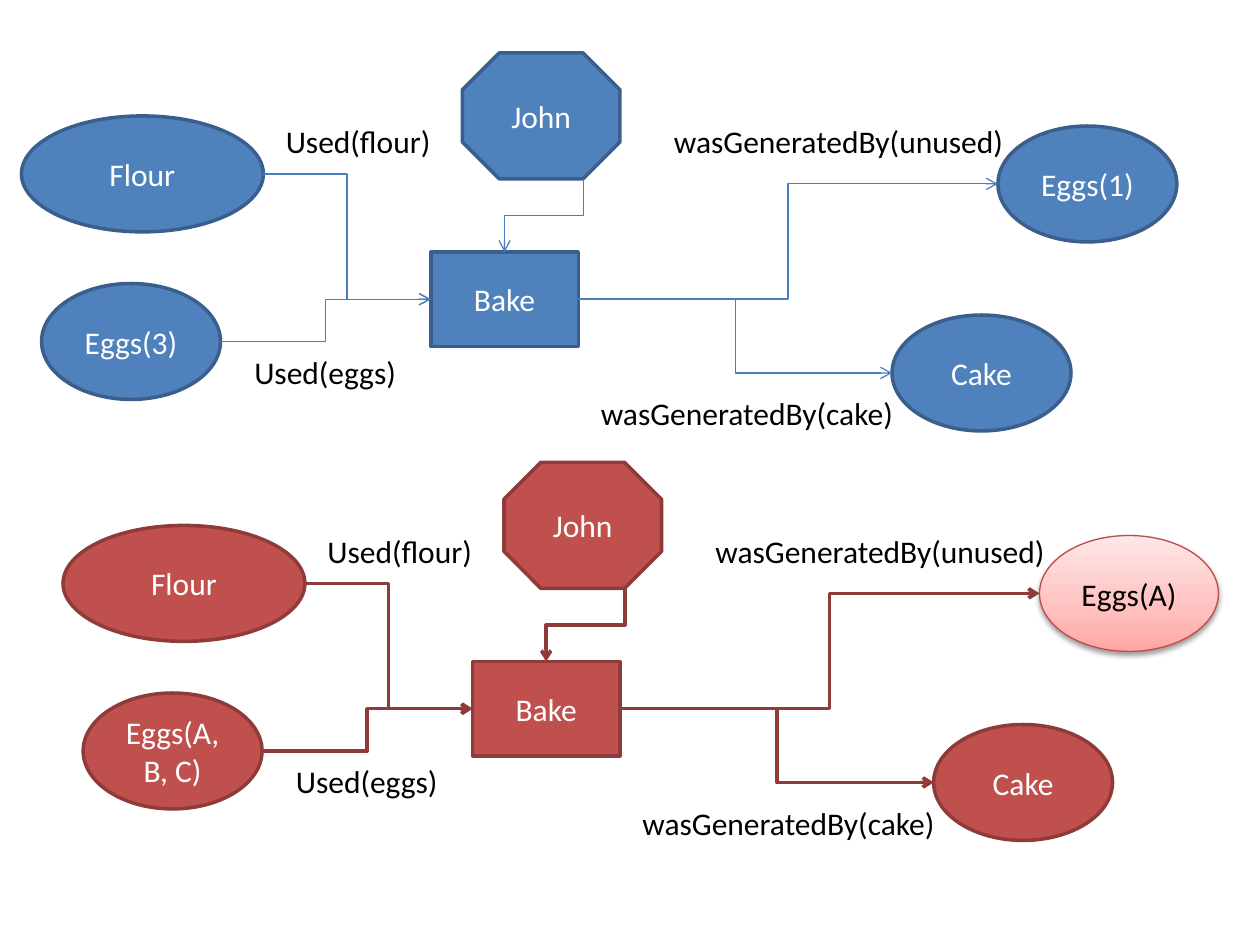
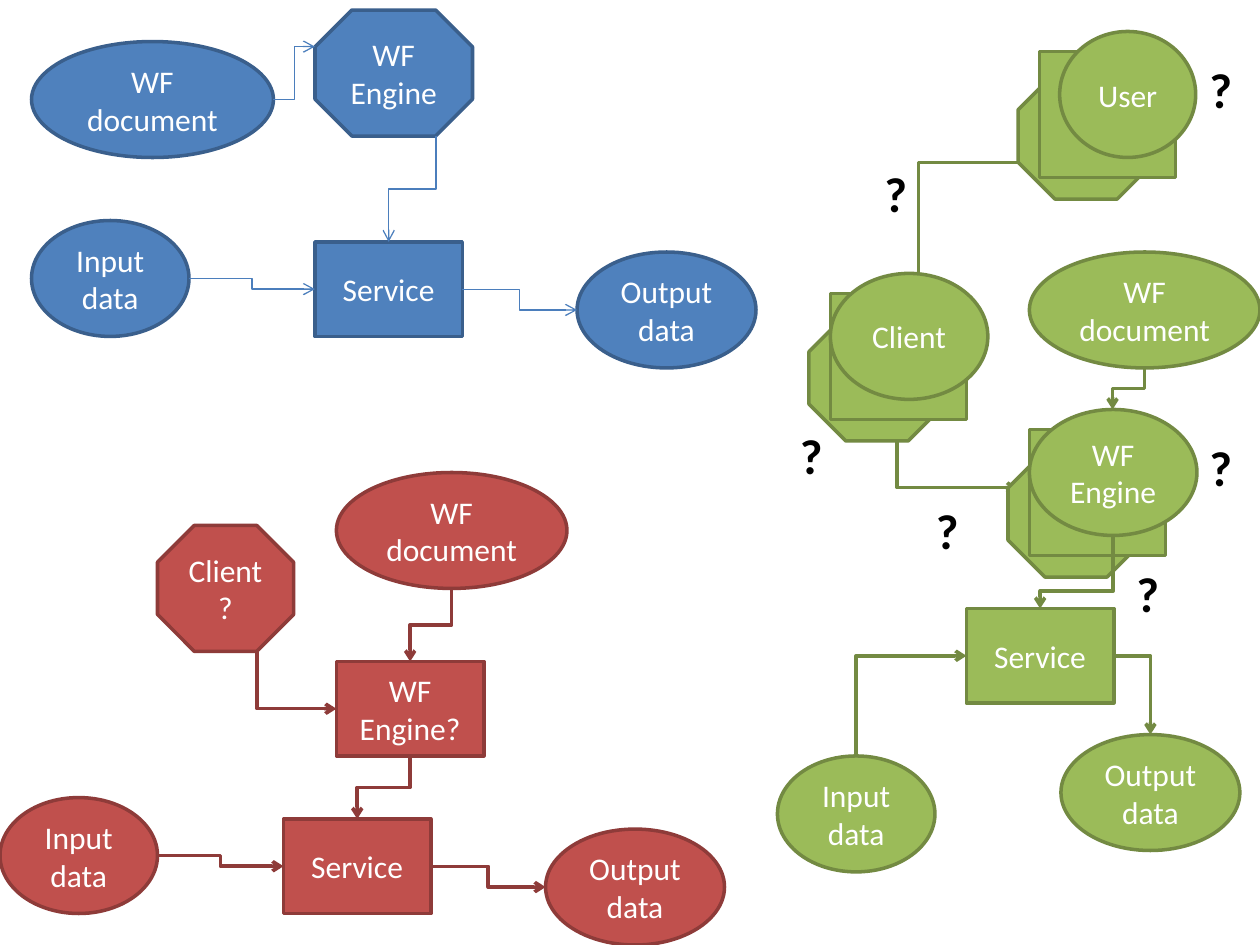
from collections import namedtuple
from lxml.etree import SubElement
from pptx import Presentation
from pptx.dml.color import RGBColor
from pptx.enum.shapes import MSO_CONNECTOR, MSO_SHAPE
from pptx.enum.text import MSO_ANCHOR, MSO_AUTO_SIZE, PP_ALIGN
from pptx.oxml.ns import qn
from pptx.util import Inches, Pt

WHITE = RGBColor(0xFF, 0xFF, 0xFF)
BLACK = RGBColor(0x00, 0x00, 0x00)
PINK_EDGE = RGBColor(0xBF, 0x4C, 0x48)
PINK_STOPS = ((0, RGBColor(0xFF, 0xA6, 0xA5)),
              (35, RGBColor(0xFF, 0xC0, 0xBF)),
              (100, RGBColor(0xFF, 0xE7, 0xE7)))

Look = namedtuple("Look", "fill edge flow flow_width")
BLUE = Look(RGBColor(0x4F, 0x81, 0xBD), RGBColor(0x3A, 0x5F, 0x8C),
            RGBColor(0x4B, 0x7E, 0xBC), 0.75)
RED = Look(RGBColor(0xC0, 0x50, 0x4D), RGBColor(0x8E, 0x3B, 0x39),
           RGBColor(0x8E, 0x3B, 0x39), 2)
GREEN = Look(RGBColor(0x9B, 0xBB, 0x59), RGBColor(0x73, 0x8A, 0x42),
             RGBColor(0x73, 0x8A, 0x42), 2)

RECT, OVAL, OCTAGON = MSO_SHAPE.RECTANGLE, MSO_SHAPE.OVAL, MSO_SHAPE.OCTAGON
BODY = {"name": "Calibri", "size": Pt(18)}
MARK = {"name": "Calibri", "size": Pt(28), "bold": True}
STEP = (1.17, 0.75)
DATA = (1.42, 0.92)
INPUT = (1.25, 0.92)
AGENT = (1.25, 1)
STACKED = (1.08, 1)
OCTAGON_CUT = 0.29

LEFT, RIGHT, TOP, BOTTOM = (0, 0.5), (1, 0.5), (0.5, 0), (0.5, 1)


def write(tf, text, fmt, color, align):
    tf.text = text
    for p in tf.paragraphs:
        p.alignment = align
        for r in p.runs:
            for name, value in fmt.items():
                setattr(r.font, name, value)
            r.font.color.rgb = color


def node(s, kind, x, y, size, text, look):
    sp = s.shapes.add_shape(kind, Inches(x), Inches(y), *map(Inches, size))
    sp.shadow.inherit = False
    sp.fill.solid()
    sp.fill.fore_color.rgb = look.fill
    sp.line.color.rgb = look.edge
    sp.line.width = Pt(2)
    if text:
        tf = sp.text_frame
        tf.word_wrap = True
        tf.vertical_anchor = MSO_ANCHOR.MIDDLE
        write(tf, text, BODY, WHITE, PP_ALIGN.CENTER)
    return sp


def label(s, x, y, w, h, text, fmt=BODY):
    tf = s.shapes.add_textbox(*map(Inches, (x, y, w, h))).text_frame
    tf.word_wrap = False
    tf.auto_size = MSO_AUTO_SIZE.SHAPE_TO_FIT_TEXT
    write(tf, text, fmt, BLACK, PP_ALIGN.LEFT)


def add_color(parent, rgb):
    return SubElement(parent, qn("a:srgbClr"), val=str(rgb))


def make_pastel(sp):
    sp.fill.gradient()
    sp.fill.gradient_angle = 90
    sp.line.color.rgb = PINK_EDGE
    sp.line.width = Pt(0.75)
    sp.text_frame.paragraphs[0].runs[0].font.color.rgb = BLACK
    spPr = sp._element.spPr
    stops = spPr.find(".//" + qn("a:gsLst"))
    for stop in list(stops):
        stops.remove(stop)
    for pos, rgb in PINK_STOPS:
        add_color(SubElement(stops, qn("a:gs"), pos=str(pos * 1000)), rgb)
    shadow = SubElement(spPr.find(qn("a:effectLst")), qn("a:outerShdw"),
                        blurRad=str(Pt(3.1)), dist=str(Pt(1.6)),
                        dir="5400000", rotWithShape="0")
    SubElement(add_color(shadow, BLACK), qn("a:alpha"), val="38000")


def point(x, y):
    return Inches(x), Inches(y)


def site(sp, spot):
    return sp.left + int(sp.width * spot[0]), sp.top + int(sp.height * spot[1])


def octagon_foot(sp):
    return sp.left + sp.width - int(OCTAGON_CUT * sp.height), sp.top + sp.height


def flow(s, start, end, look, down=False, corner=False, bend=None):
    (x1, y1), (x2, y2) = start, end
    if down:
        cx, cy = (x1 + x2) // 2, (y1 + y2) // 2
        x1, y1, x2, y2 = (cx + y1 - cy, cy - x1 + cx,
                          cx + y2 - cy, cy - x2 + cx)
    c = s.shapes.add_connector(MSO_CONNECTOR.ELBOW, x1, y1, x2, y2)
    c.line.color.rgb = look.flow
    c.line.width = Pt(look.flow_width)
    spPr = c._element.spPr
    if down:
        spPr.find(qn("a:xfrm")).set("rot", "5400000")
    geometry = spPr.find(qn("a:prstGeom"))
    if corner:
        geometry.set("prst", "bentConnector2")
    if bend:
        SubElement(geometry.find(qn("a:avLst")), qn("a:gd"),
                   name="adj1", fmla=f"val {int(bend * 100000)}")
    SubElement(spPr.find(qn("a:ln")), qn("a:tailEnd"), type="arrow")
    SubElement(spPr, qn("a:effectLst"))


def baking(s, look, dx, dy, eggs_in, eggs_left):
    def place(kind, x, y, size, text):
        return node(s, kind, x + dx, y + dy, size, text, look)

    bake = place(RECT, 3.42, 2, STEP, "Bake")
    cake = place(OVAL, 7.08, 2.5, DATA, "Cake")
    eggs = place(OVAL, 0.33, 2.25, DATA, eggs_in)
    john = place(OCTAGON, 3.67, 0.42, AGENT, "John")
    flour = place(OVAL, 0.17, 0.92, (1.92, 0.92), "Flour")
    unused = place(OVAL, 7.92, 1, DATA, eggs_left)
    for source in (eggs, flour):
        flow(s, site(source, RIGHT), site(bake, LEFT), look)
    for result in (cake, unused):
        flow(s, site(bake, RIGHT), site(result, LEFT), look)
    flow(s, octagon_foot(john), site(bake, TOP), look, down=True)
    for x, y, w, text in ((1.92, 2.75, 1.34, "Used(eggs)"),
                          (5.25, 0.92, 2.85, "wasGeneratedBy(unused)"),
                          (4.67, 3.08, 2.55, "wasGeneratedBy(cake)"),
                          (2.17, 0.92, 1.36, "Used(flour)")):
        label(s, x + dx, y + dy, w, 0.4, text)
    return unused


def service_row(s, look, x, y):
    service = node(s, RECT, x, y, STEP, "Service", look)
    output = node(s, OVAL, x + 2.08, y + 0.08, DATA, "Output data", look)
    given = node(s, OVAL, x - 2.25, y - 0.17, INPUT, "Input\ndata", look)
    flow(s, site(given, RIGHT), site(service, LEFT), look)
    flow(s, site(service, RIGHT), site(output, LEFT), look)
    return service


def stack(s, x, y, oval_dx, oval_width, text):
    node(s, OCTAGON, x, y, STACKED, "", GREEN)
    node(s, RECT, x + 0.17, y - 0.17, STACKED, "", GREEN)
    return node(s, OVAL, x + oval_dx, y - 0.33, (oval_width, 1), text, GREEN)


def engine_as_agent(s):
    service = service_row(s, BLUE, 2.5, 1.92)
    engine = node(s, OCTAGON, 2.5, 0.08, AGENT, "WF Engine", BLUE)
    document = node(s, OVAL, 0.25, 0.33, (1.92, 0.92), "WF document", BLUE)
    flow(s, octagon_foot(engine), site(service, TOP), BLUE, down=True)
    flow(s, site(document, RIGHT), site(engine, (0, OCTAGON_CUT)), BLUE)


def engine_as_step(s):
    service = service_row(s, RED, 2.25, 6.5)
    client = node(s, OCTAGON, 1.25, 4.17, STACKED, "Client?", RED)
    engine = node(s, RECT, 2.67, 5.25, STEP, "WF Engine?", RED)
    document = node(s, OVAL, 2.67, 3.75, (1.83, 0.92), "WF document", RED)
    flow(s, octagon_foot(client), site(engine, LEFT), RED, down=True, corner=True)
    flow(s, site(engine, BOTTOM), site(service, TOP), RED, down=True)
    flow(s, site(document, BOTTOM), site(engine, TOP), RED, down=True)


def open_roles(s):
    service = node(s, RECT, 7.67, 4.83, STEP, "Service", GREEN)
    output = node(s, OVAL, 8.42, 5.83, DATA, "Output data", GREEN)
    given = node(s, OVAL, 6.17, 6, INPUT, "Input\ndata", GREEN)
    document = node(s, OVAL, 8.17, 2, (1.83, 0.92), "WF document", GREEN)
    flow(s, site(given, TOP), site(service, LEFT), GREEN, down=True, corner=True)
    flow(s, site(service, RIGHT), site(output, TOP), GREEN, corner=True)
    flow(s, point(7.12, 3.33), point(8.08, 3.87), GREEN, down=True, corner=True)
    flow(s, point(8.08, 1.29), point(7.29, 2.33), GREEN, corner=True)
    flow(s, site(document, BOTTOM), point(8.83, 3.25), GREEN, down=True)
    stack(s, 8.08, 0.58, 0.33, 1.08, "User")
    stack(s, 6.42, 2.5, 0.17, 1.25, "Client")
    engine = stack(s, 8, 3.58, 0.17, 1.33, "WF Engine")
    flow(s, site(engine, BOTTOM), site(service, TOP), GREEN, down=True, bend=0.76)
    for x, y in ((9.5, 0.42), (6.92, 1.25), (7.33, 3.92),
                 (6.25, 3.33), (9.5, 3.42), (8.92, 4.42)):
        label(s, x, y, 0.38, 0.57, "?", MARK)


def main():
    prs = Presentation()
    prs.slide_width, prs.slide_height = Inches(10), Inches(7.5)
    blank = prs.slide_layouts[6]

    s = prs.slides.add_slide(blank)
    baking(s, BLUE, 0, 0, "Eggs(3)", "Eggs(1)")
    make_pastel(baking(s, RED, 0.33, 3.25, "Eggs(A, B, C)", "Eggs(A)"))

    s = prs.slides.add_slide(blank)
    engine_as_agent(s)
    engine_as_step(s)
    open_roles(s)

    prs.save("out.pptx")


if __name__ == "__main__":
    main()
